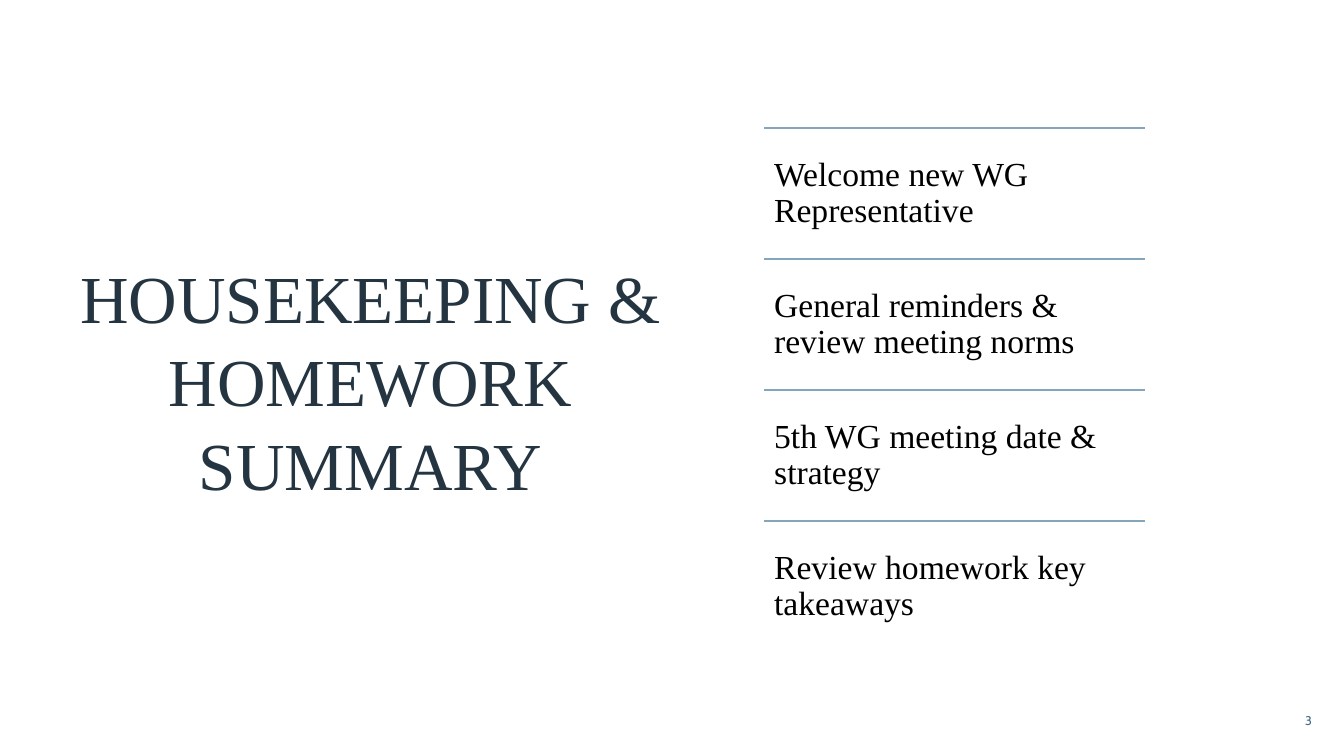
from typing import NamedTuple

from lxml import etree
from pptx import Presentation
from pptx import util as u
from pptx.dml import color
from pptx.enum import shapes, text
from pptx.oxml import ns

PX = 9144  # EMU per px, 100 px to the inch
SERIF = "Times New Roman"


class Box(NamedTuple):
    left: int
    top: int
    width: int
    height: int


class Style(NamedTuple):
    font: str
    size: int
    color: str
    align: text.PP_ALIGN
    space: float = 1.0
    before: int = 0
    inset: int = 5  # top and bottom, px


TITLE = Style(SERIF, 48, "243541", text.PP_ALIGN.CENTER, space=1.04, before=10)
ITEM = Style(SERIF, 24, "000000", text.PP_ALIGN.LEFT, space=0.9, inset=10)
NUMBER = Style("Cabin", 9, "486B83", text.PP_ALIGN.RIGHT)

ITEMS = [
    "Welcome new WG Representative",
    "General reminders & review meeting norms",
    "5th WG meeting date & strategy",
    "Review homework key takeaways",
]
LIST = Box(758, 127, 378, 520)


def px(n: int) -> u.Emu:
    return u.Emu(n * PX)


def rgb(code: str) -> color.RGBColor:
    return color.RGBColor.from_string(code)


def write(slide, box: Box, words: str, style: Style) -> None:
    frame = slide.shapes.add_textbox(*map(px, box)).text_frame
    frame.word_wrap = True
    frame.vertical_anchor = text.MSO_ANCHOR.MIDDLE
    frame.margin_top = frame.margin_bottom = px(style.inset)
    para = frame.paragraphs[0]
    para.alignment = style.align
    para.line_spacing = style.space
    para.space_before = u.Pt(style.before)
    run = para.add_run()
    run.text = words
    run.font.name = style.font
    run.font.size = u.Pt(style.size)
    run.font.color.rgb = rgb(style.color)


def rule(slide, left: int, top: int, width: int) -> None:
    line = slide.shapes.add_connector(
        shapes.MSO_CONNECTOR.STRAIGHT, px(left), px(top), px(left + width), px(top))
    line.line.color.rgb = rgb("83A6BC")
    line.line.width = u.Pt(1)
    etree.SubElement(line._element.spPr, ns.qn("a:effectLst"))


def main() -> None:
    deck = Presentation()
    deck.slide_width, deck.slide_height = px(1333), px(750)
    slide = deck.slides.add_slide(deck.slide_layouts[6])

    # Title
    write(slide, Box(30, 109, 675, 533), "HOUSEKEEPING & HOMEWORK SUMMARY", TITLE)

    # Agenda: each item under its own rule
    step = LIST.height // len(ITEMS)
    for i, words in enumerate(ITEMS):
        row = LIST._replace(top=LIST.top + i * step, height=step)
        rule(slide, row.left, row.top, row.width)
        write(slide, row, words, ITEM)

    # Slide number
    write(slide, Box(1216, 695, 95, 40), "3", NUMBER)

    deck.save("out.pptx")


if __name__ == "__main__":
    main()
